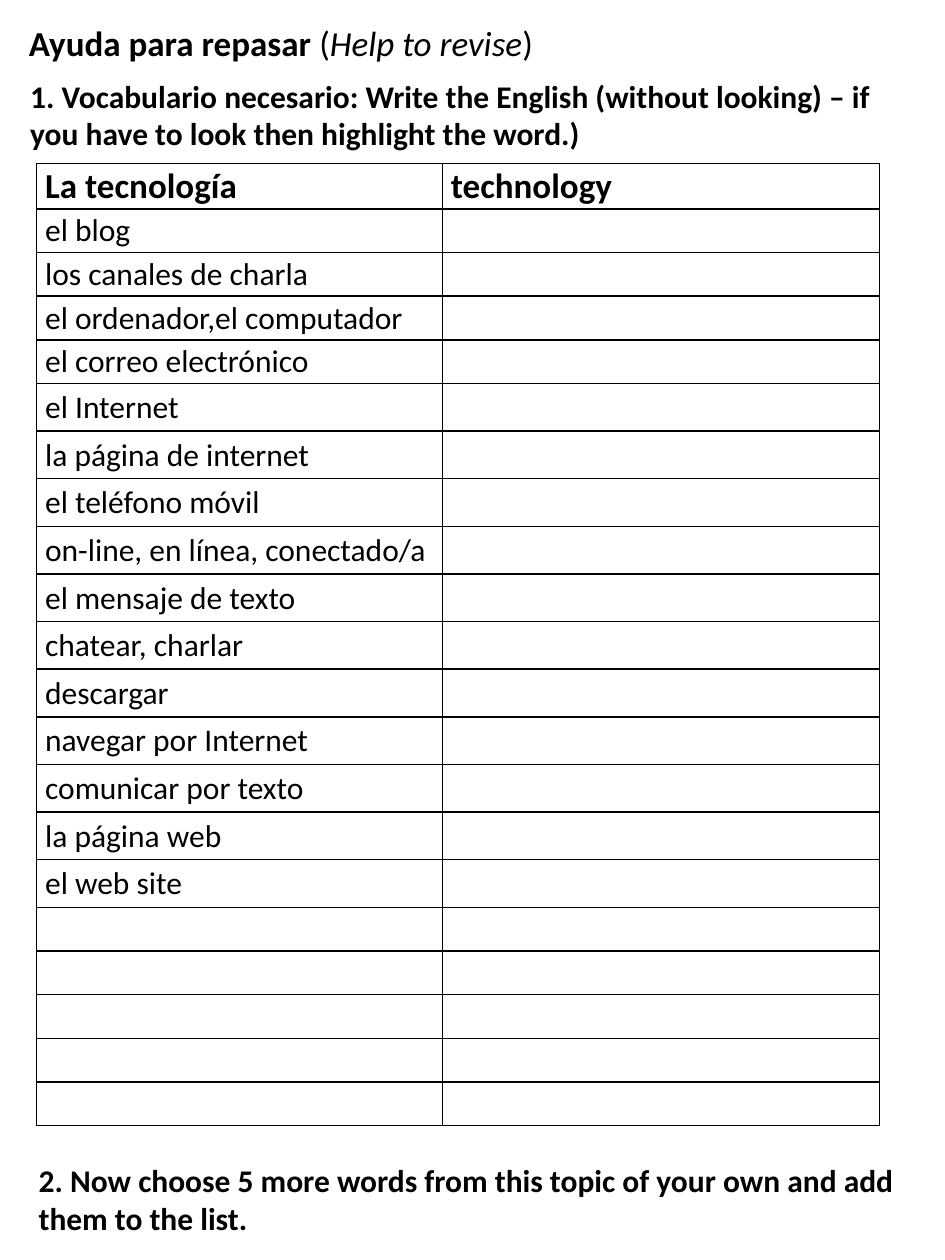
from pptx import Presentation
from pptx.dml.color import RGBColor
from pptx.enum.text import MSO_ANCHOR, MSO_AUTO_SIZE, PP_ALIGN
from pptx.oxml import parse_xml
from pptx.oxml.ns import nsdecls
from pptx.util import Cm, Pt

# Content
TITLE = [("Ayuda para repasar ", {"bold": True}), ("(", {}),
         ("Help to revise", {"italic": True}), (")", {})]
TASKS = [  # text, left, top
    ("1. Vocabulario necesario: Write the English (without looking) – "
     "if you have to look then highlight the word.)", 0.36, 1.42),
    ("2. Now choose 5 more words from this topic of your own "
     "and add them to the list.", 0.53, 23.29),
]
HEAD = ("La tecnología", "technology")
WORDS = ["el blog", "los canales de charla", "el ordenador,el computador",
         "el correo electrónico", "el Internet", "la página de internet",
         "el teléfono móvil", "on-line, en línea, conectado/a",
         "el mensaje de texto", "chatear, charlar", "descargar",
         "navegar por Internet", "comunicar por texto", "la página web",
         "el web site"]
SPARE = 5

# Style and sizes
BLACK = RGBColor(0, 0, 0)
WHITE = RGBColor(255, 255, 255)
FONT = "Calibri"
COLS = (8.18, 8.81)
HEAD_H, LOW, TALL = 0.91, 0.88, 0.96


def write(frame, text, size=18, bold=False, italic=False):
    run = frame.paragraphs[0].add_run()
    run.text = text
    font = run.font
    font.name, font.size = FONT, Pt(size)
    font.bold, font.italic = bold, italic
    font.color.rgb = BLACK


def border(cell):
    props = cell._tc.get_or_add_tcPr()
    for i, side in enumerate(("lnL", "lnR", "lnT", "lnB")):
        props.insert(i, parse_xml(
            f'<a:{side} {nsdecls("a")} w="{Pt(1)}"><a:solidFill>'
            f'<a:srgbClr val="{BLACK}"/></a:solidFill></a:{side}>'))


deck = Presentation()
deck.slide_width, deck.slide_height = Cm(19.05), Cm(25.4)
slide = deck.slides.add_slide(deck.slide_layouts[5])

# Title
title = slide.shapes.title
title.left, title.top = Cm(0.33), Cm(0.3)
title.width, title.height = Cm(17.81), Cm(1.12)
frame = title.text_frame
frame.auto_size = MSO_AUTO_SIZE.SHAPE_TO_FIT_TEXT
frame.vertical_anchor = MSO_ANCHOR.TOP
frame.paragraphs[0].alignment = PP_ALIGN.LEFT
for text, form in TITLE:
    write(frame, text, size=20, **form)

# Tasks
for text, left, top in TASKS:
    box = slide.shapes.add_textbox(Cm(left), Cm(top), Cm(17.78), Cm(1.8))
    box.text_frame.word_wrap = True
    box.text_frame.auto_size = MSO_AUTO_SIZE.SHAPE_TO_FIT_TEXT
    write(box.text_frame, text, bold=True)

# Word table: the first four words and the spare rows are lower
rows = [HEAD] + [(word, "") for word in WORDS] + [("", "")] * SPARE
highs = [HEAD_H] + [LOW] * 4 + [TALL] * (len(WORDS) - 4) + [LOW] * SPARE
table = slide.shapes.add_table(len(rows), len(COLS), Cm(0.74), Cm(3.3),
                               Cm(sum(COLS)), Cm(sum(highs))).table
for col, wide in zip(table.columns, COLS):
    col.width = Cm(wide)
for r, (row, high) in enumerate(zip(rows, highs)):
    table.rows[r].height = Cm(high)
    for c, text in enumerate(row):
        cell = table.cell(r, c)
        cell.fill.solid()
        cell.fill.fore_color.rgb = WHITE
        border(cell)
        cell.vertical_anchor = MSO_ANCHOR.MIDDLE
        cell.margin_left = Cm(0.17)
        cell.margin_right = cell.margin_top = Cm(0.02)
        cell.margin_bottom = 0
        if text:
            write(cell.text_frame, text, size=18 if r else 20, bold=r == 0)

deck.save("out.pptx")
